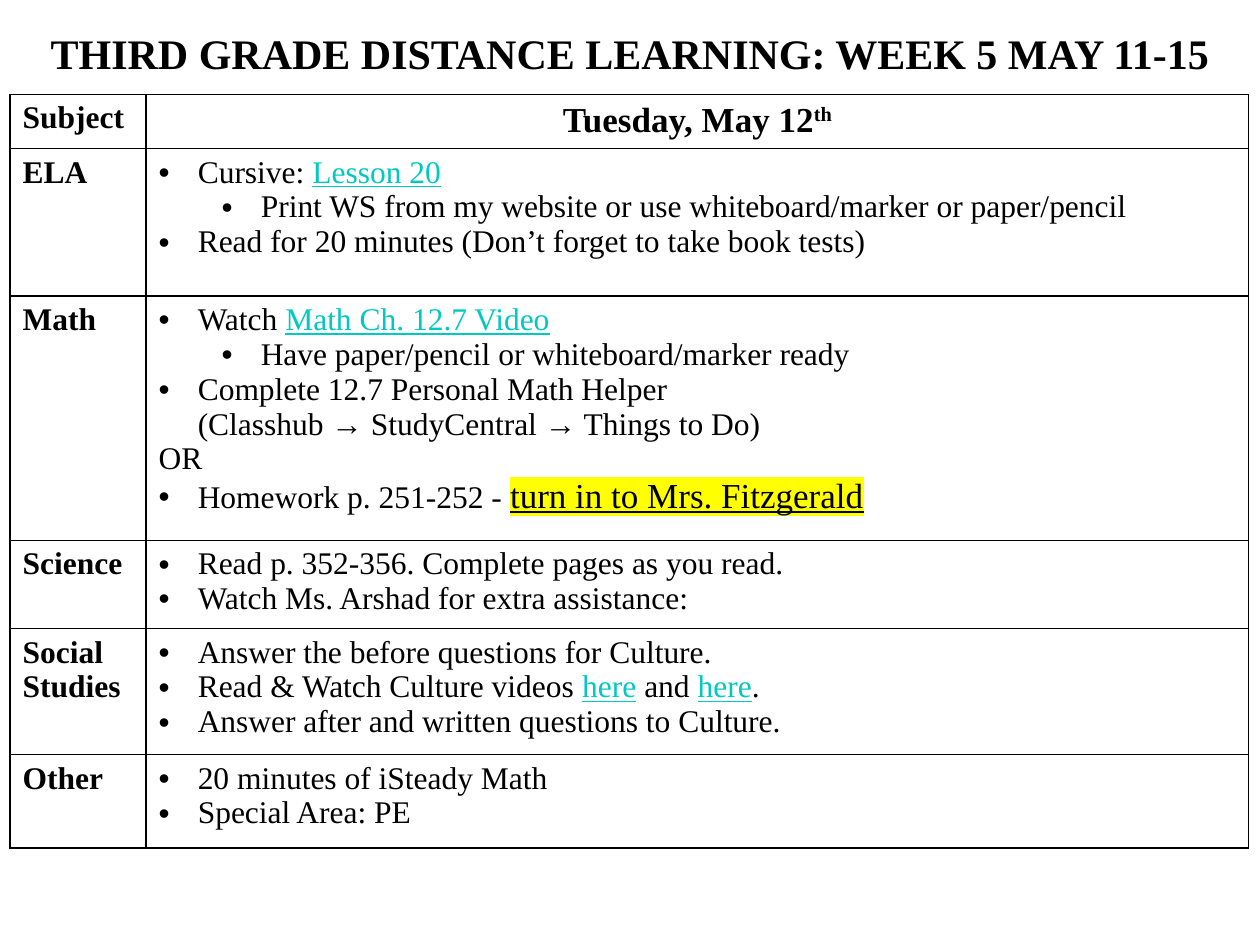
from pptx import Presentation
from pptx.dml.color import RGBColor as RGB
from pptx.enum.text import MSO_AUTO_SIZE as Auto, PP_ALIGN as Align
from pptx.oxml.ns import qn
from pptx.util import Inches, Pt
from lxml.etree import SubElement as Sub, Element

BLACK = RGB(0, 0, 0)
WHITE = RGB(255, 255, 255)
TEAL = RGB(0, 200, 195)
YELLOW = RGB(255, 255, 0)
FONT = "Times New Roman"

LINK = dict(color=TEAL, line=True)
MARK = dict(size=20, line=True, mark=YELLOW)
HEADS = ("Subject", ["Tuesday, May 12", ("th", dict(base=30))])

# Subject, row height, then lines: (bullet level or None, runs)
PLAN = [
    ("ELA", 1.17, [
        (0, ["Cursive: ", ("Lesson 20", LINK)]),
        (1, ["Print WS from my website or use whiteboard/marker or paper/pencil"]),
        (0, ["Read for 20 minutes (Don’t forget to take book tests)"]),
    ]),
    ("Math", 1.94, [
        (0, ["Watch ", ("Math Ch. 12.7 Video", LINK)]),
        (1, ["Have paper/pencil or whiteboard/marker ready"]),
        (0, ["Complete 12.7 Personal Math Helper\n"
             "(Classhub → StudyCentral → Things to Do)"]),
        (None, ["OR"]),
        (0, ["Homework p. 251-252 - ", ("turn in to Mrs. Fitzgerald", MARK)]),
    ]),
    ("Science", 0.7, [
        (0, ["Read p. 352-356. Complete pages as you read."]),
        (0, ["Watch Ms. Arshad for extra assistance:"]),
    ]),
    ("Social Studies", 1.0, [
        (0, ["Answer the before questions for Culture."]),
        (0, ["Read & Watch Culture videos ", ("here", LINK), " and ",
             ("here", LINK), "."]),
        (0, ["Answer after and written questions to Culture."]),
    ]),
    ("Other", 0.74, [
        (0, ["20 minutes of iSteady Math"]),
        (0, ["Special Area: PE"]),
    ]),
]


def say(par, text, size=18, bold=False, color=BLACK, line=False,
        mark=None, base=None):
    """Add formatted text to a paragraph; a newline is a line break."""
    for i, part in enumerate(text.split("\n")):
        if i:
            par.add_line_break()
        run = par.add_run()
        run.text = part
        font = run.font
        font.name, font.size, font.bold = FONT, Pt(size), bold
        font.color.rgb = color
        font.underline = line
        props = run.font._element
        if base:
            props.set("baseline", str(base * 1000))
        if mark:
            glow = Element(qn("a:highlight"))
            Sub(glow, qn("a:srgbClr"), val=str(mark))
            props.find(qn("a:latin")).addprevious(glow)


class Page:
    """Holds the slide and the style of its parts."""

    def __init__(self, deck):
        self.slide = deck.slides.add_slide(deck.slide_layouts[6])
        self.edge = Pt(1)

    def title(self, text, left, top, width, height):
        box = self.slide.shapes.add_textbox(
            Inches(left), Inches(top), Inches(width), Inches(height))
        frame = box.text_frame
        frame.word_wrap = True
        frame.auto_size = Auto.SHAPE_TO_FIT_TEXT
        par = frame.paragraphs[0]
        par.alignment = Align.CENTER
        say(par, text, size=24, bold=True)

    def table(self, left, top, cols, rows):
        frame = self.slide.shapes.add_table(
            len(rows), len(cols), Inches(left), Inches(top),
            Inches(sum(cols)), Inches(sum(rows)))
        grid = frame.table
        grid.first_row = grid.horz_banding = False
        for col, width in zip(grid.columns, cols):
            col.width = Inches(width)
        for row, height in zip(grid.rows, rows):
            row.height = Inches(height)
        for cell in grid.iter_cells():
            self.border(cell)
            cell.fill.solid()
            cell.fill.fore_color.rgb = WHITE
        return grid

    def border(self, cell):
        props = cell._tc.get_or_add_tcPr()
        for side in ("lnL", "lnR", "lnT", "lnB"):
            rule = Sub(props, qn("a:" + side), w=str(self.edge))
            fill = Sub(rule, qn("a:solidFill"))
            Sub(fill, qn("a:srgbClr"), val=str(BLACK))

    def bullet(self, par, level):
        par.level = level
        props = par._p.get_or_add_pPr()
        props.set("marL", str(Inches(0.31 + 0.5 * level)))
        props.set("indent", str(-Inches(0.31)))
        Sub(props, qn("a:buFont"), typeface="Arial")
        Sub(props, qn("a:buChar"), char="•")

    def fill(self, cell, lines, align=None, **style):
        frame = cell.text_frame
        for i, (level, runs) in enumerate(lines):
            par = frame.add_paragraph() if i else frame.paragraphs[0]
            par.alignment = align
            if level is not None:
                self.bullet(par, level)
            for run in runs:
                text, extra = (run, {}) if isinstance(run, str) else run
                say(par, text, **{**style, **extra})


def main():
    deck = Presentation()
    deck.slide_width, deck.slide_height = Inches(10), Inches(7.5)
    page = Page(deck)

    # Timetable: heading row, then one row per subject
    grid = page.table(0.08, 0.75, [1.08, 8.75],
                      [0.43] + [height for _, height, _ in PLAN])
    subject, day = HEADS
    page.fill(grid.cell(0, 0), [(None, [subject])], bold=True)
    page.fill(grid.cell(0, 1), [(None, day)], Align.CENTER, size=20, bold=True)
    for i, (name, _, lines) in enumerate(PLAN, 1):
        page.fill(grid.cell(i, 0), [(None, [name])], bold=True)
        page.fill(grid.cell(i, 1), lines)

    # Title
    page.title("THIRD GRADE DISTANCE LEARNING: WEEK 5 MAY 11-15",
               0, 0.17, 10, 0.5)
    deck.save("out.pptx")


if __name__ == "__main__":
    main()
